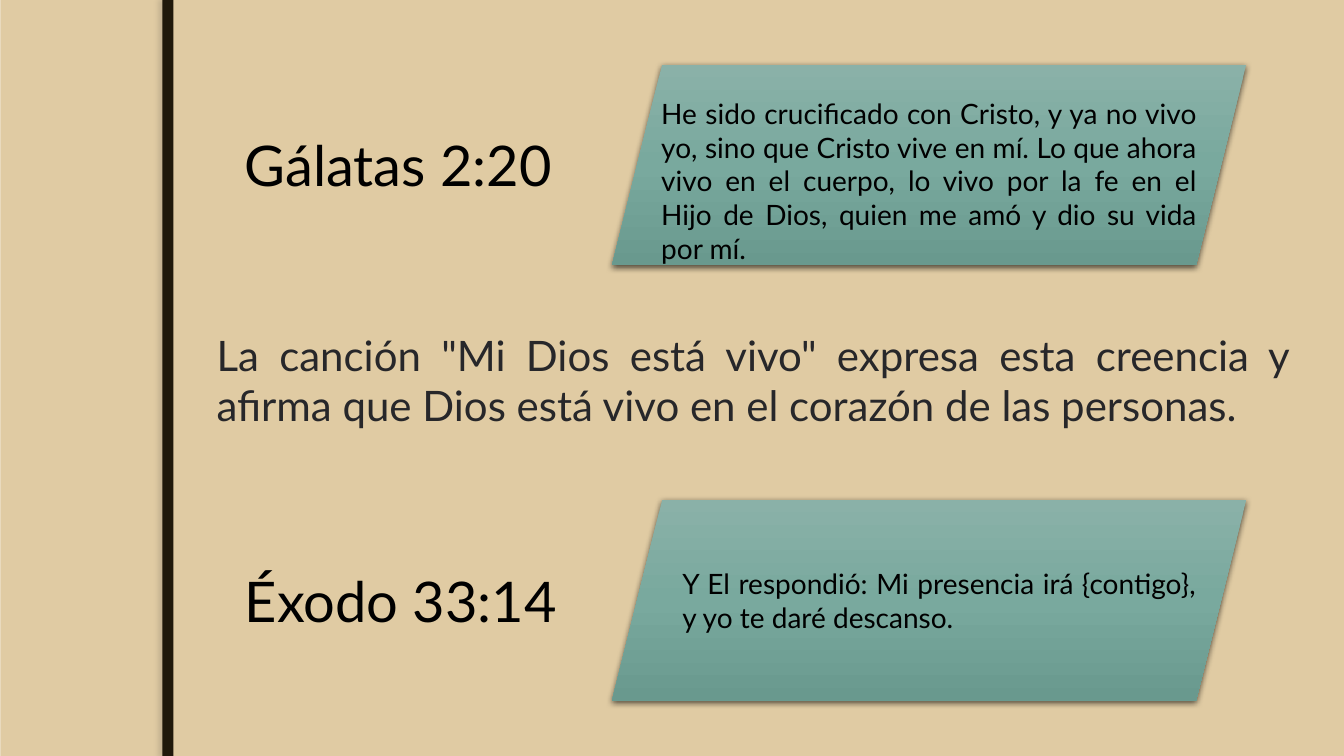
from copy import deepcopy
from dataclasses import dataclass

from lxml import etree
from pptx import Presentation
from pptx import util as u
from pptx.dml.color import RGBColor
from pptx.enum import shapes, text
from pptx.oxml.ns import qn

BACKGROUND = RGBColor(0xEB, 0xDD, 0xC3)
SAND = RGBColor(0xE0, 0xCB, 0xA3)
DARK_BROWN = RGBColor(0x20, 0x19, 0x0B)
SHADOW_BROWN = RGBColor(0x76, 0x6E, 0x60)
BLACK = RGBColor(0x00, 0x00, 0x00)
CHARCOAL = RGBColor(0x27, 0x27, 0x2A)
TEAL_STOPS = (
    RGBColor(0x8A, 0xB1, 0xA8),
    RGBColor(0x79, 0xA9, 0x9E),
    RGBColor(0x69, 0x99, 0x8E),
)
FONT = "Lato"
WIDTH, HEIGHT = 13.33, 7.5


@dataclass(frozen=True)
class Area:
    left: float
    top: float
    width: float
    height: float

    def lengths(self) -> list:
        return [u.Inches(n) for n in (self.left, self.top, self.width, self.height)]


@dataclass(frozen=True)
class Shadow:
    color: RGBColor
    opacity: int
    blur: float
    distance: float
    angle: int


@dataclass(frozen=True)
class Verse:
    reference: str
    reference_top: float
    panel_top: float
    quote: str
    quote_area: Area


RAIL_SHADOW = Shadow(SHADOW_BROWN, 25, 3, 3, 180)
PANEL_SHADOW = Shadow(BLACK, 63, 4.5, 1.5, 90)

VERSES = (
    Verse(
        "Gálatas 2:20", 1.25, 0.64,
        "He sido crucificado con Cristo, y ya no vivo yo, sino que Cristo vive en mí. "
        "Lo que ahora vivo en el cuerpo, lo vivo por la fe en el Hijo de Dios, "
        "quien me amó y dio su vida por mí.",
        Area(6.46, 0.91, 5.51, 1.45),
    ),
    Verse(
        "Éxodo 33:14", 5.57, 4.96,
        "Y El respondió: Mi presencia irá {contigo}, y yo te daré descanso.",
        Area(6.67, 5.57, 5.29, 0.77),
    ),
)
STATEMENT = (
    "La canción \"Mi Dios está vivo\" expresa esta creencia y "
    "afirma que Dios está vivo en el corazón de las personas."
)


def add_plain_shape(page, kind, area: Area):
    """Add a shape with neither outline nor shadow."""
    shape = page.shapes.add_shape(kind, *area.lengths())
    shape.shadow.inherit = False
    shape.line.fill.background()
    return shape


def add_bar(page, area: Area, color: RGBColor):
    bar = add_plain_shape(page, shapes.MSO_SHAPE.RECTANGLE, area)
    bar.fill.solid()
    bar.fill.fore_color.rgb = color
    return bar


def cast_shadow(shape, shadow: Shadow) -> None:
    effects = shape._element.spPr.find(qn("a:effectLst"))
    outer = etree.SubElement(
        effects, qn("a:outerShdw"),
        blurRad=str(u.Pt(shadow.blur)), dist=str(u.Pt(shadow.distance)),
        dir=str(shadow.angle * 60000), rotWithShape="0",
    )
    color = etree.SubElement(outer, qn("a:srgbClr"), val=str(shadow.color))
    etree.SubElement(color, qn("a:alpha"), val=str(shadow.opacity * 1000))


def add_panel(page, area: Area) -> None:
    """Add a slanted panel shaded from light at the top to dark."""
    panel = add_plain_shape(page, shapes.MSO_SHAPE.PARALLELOGRAM, area)
    panel.fill.gradient()
    panel.fill.gradient_angle = 270
    stop_list = panel._element.spPr.find(".//" + qn("a:gsLst"))
    stop_list.insert(1, deepcopy(stop_list[0]))
    for index, (stop, color) in enumerate(zip(panel.fill.gradient_stops, TEAL_STOPS)):
        stop.color.rgb = color
        stop.position = index / 2
    cast_shadow(panel, PANEL_SHADOW)


def add_text(page, words: str, area: Area, *, size: int, color: RGBColor = BLACK,
             align=text.PP_ALIGN.LEFT, indent: float = 0) -> None:
    box = page.shapes.add_textbox(*area.lengths())
    box.text_frame.word_wrap = True
    para = box.text_frame.paragraphs[0]
    para.alignment = align
    if indent:
        properties = para._p.get_or_add_pPr()
        properties.set("marL", str(u.Inches(indent)))
        properties.set("indent", "0")
    span = para.add_run()
    span.text = words
    span.font.name = FONT
    span.font.size = u.Pt(size)
    span.font.color.rgb = color


def main() -> None:
    deck = Presentation()
    deck.slide_width, deck.slide_height = u.Inches(WIDTH), u.Inches(HEIGHT)
    page = deck.slides.add_slide(deck.slide_layouts[6])
    page.background.fill.solid()
    page.background.fill.fore_color.rgb = BACKGROUND

    add_bar(page, Area(0.01, 0, WIDTH, HEIGHT), SAND)
    rail = add_bar(page, Area(1.61, 0, 0.11, HEIGHT), DARK_BROWN)
    cast_shadow(rail, RAIL_SHADOW)

    add_text(page, STATEMENT, Area(1.96, 3.22, 10.93, 1.54), size=30,
             color=CHARCOAL, align=text.PP_ALIGN.JUSTIFY, indent=0.09)
    for verse in VERSES:
        add_panel(page, Area(6.07, verse.panel_top, 6.29, 1.99))
        add_text(page, verse.quote, verse.quote_area, size=20,
                 align=text.PP_ALIGN.JUSTIFY)
        add_text(page, verse.reference, Area(2.33, verse.reference_top, 3.3, 0.77),
                 size=40)

    deck.save("out.pptx")


if __name__ == "__main__":
    main()
